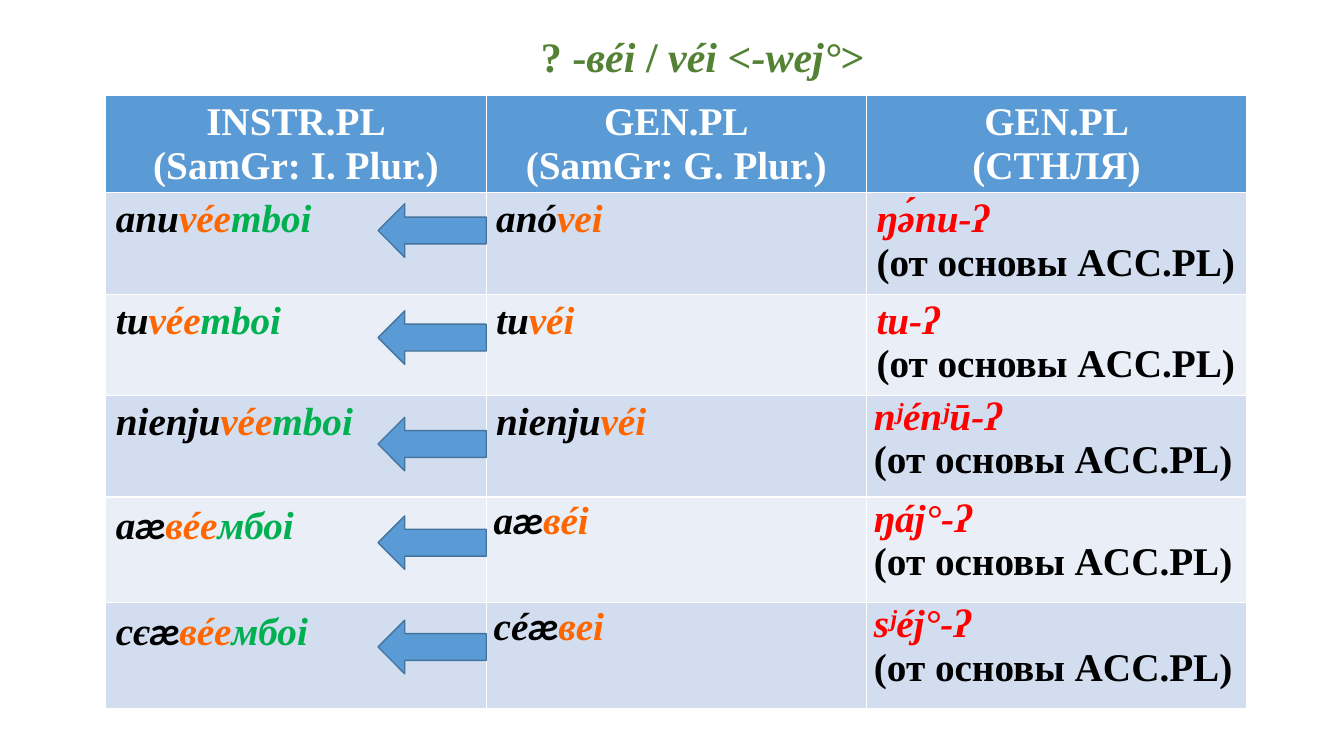
from pptx import Presentation
from pptx.dml.color import RGBColor
from pptx.enum import shapes, text
from pptx.util import Pt

SERIF, SANS = "Times New Roman", "Calibri"
WHITE = RGBColor(0xFF, 0xFF, 0xFF)
BLACK = RGBColor(0, 0, 0)
GREEN = RGBColor(0x00, 0xB0, 0x50)
ORANGE = RGBColor(0xFF, 0x66, 0x00)
RED = RGBColor(0xFF, 0, 0)
TITLE_GREEN = RGBColor(0x54, 0x82, 0x35)
BLUE = RGBColor(0x5B, 0x9B, 0xD5)
BLUE_LINE = RGBColor(0x43, 0x73, 0x9E)
BANDS = RGBColor(0xD2, 0xDE, 0xEF), RGBColor(0xEA, 0xEF, 0xF7)

TITLE = [("? -", False), ("вéi ", True), ("/ ", False), ("véi ", True),
         ("<", False), ("-wej°", True), (">", False)]
HEADERS = [("INSTR.PL", "(SamGr: I. Plur.)"),
           ("GEN.PL", "(SamGr: G. Plur.)"),
           ("GEN.PL", "(СТНЛЯ)")]
# Instrumental parts, genitive parts, modern form, columns with tight margins
FORMS = [
    (["anu", "vée", "mboi"], ["anó", "vei"], "ŋə́nu-ʔ", ()),
    (["tu", "vée", "mboi"], ["tu", "véi"], "tu-ʔ", ()),
    (["nienju", "vée", "mboi"], ["nienju", "véi"], "nʲénʲū-ʔ", (2,)),
    (["аæ", "вéе", "мбоi"], ["aæ", "вéi"], "ŋáj°-ʔ", (1, 2)),
    (["cєæ", "вéе", "мбоi"], ["céæ", "вei"], "sʲéj°-ʔ", (1, 2)),
]
STEM_NOTE = "(от основы ACC.PL)"
ROW_HEIGHTS = [69, 72.5, 72.5, 72.5, 75.5, 75.5]
ARROW_TOPS = [145.5, 222, 298, 368.5, 443]


def add_run(p, content, color, font=SERIF):
    r = p.add_run()
    r.text = content
    r.font.name = font
    r.font.color.rgb = color
    return r


def format_paragraph(p, size, italic=None, align=None):
    p.font.size = Pt(size)
    p.font.bold = True
    p.font.italic = italic
    p.alignment = align


def fill_title(sp):
    sp.left, sp.top, sp.width, sp.height = Pt(55.5), Pt(16.5), Pt(893), Pt(51)
    tf = sp.text_frame
    tf.auto_size = text.MSO_AUTO_SIZE.NONE
    tf.vertical_anchor = text.MSO_ANCHOR.MIDDLE
    p = tf.paragraphs[0]
    format_paragraph(p, 30, align=text.PP_ALIGN.CENTER)
    p.line_spacing = 0.9
    for content, italic in TITLE:
        add_run(p, content, TITLE_GREEN).font.italic = italic


def fill_cell(cell, fill, tight=False):
    cell.fill.solid()
    cell.fill.fore_color.rgb = fill
    if tight:
        cell.margin_left = cell.margin_right = Pt(5.4)
        cell.margin_top = cell.margin_bottom = 0
    return cell.text_frame


def write_header(tf, lines):
    for i, line in enumerate(lines):
        p = tf.add_paragraph() if i else tf.paragraphs[0]
        format_paragraph(p, 28, align=text.PP_ALIGN.CENTER)
        add_run(p, line, WHITE)


def write_word(tf, parts):
    p = tf.paragraphs[0]
    format_paragraph(p, 28, italic=True)
    for part, color in zip(parts, (BLACK, ORANGE, GREEN)):
        add_run(p, part.removesuffix("æ"), color)
        if part.endswith("æ"):
            add_run(p, "æ", color, SANS)


def write_modern_form(tf, form):
    p = tf.paragraphs[0]
    format_paragraph(p, 28, italic=True)
    add_run(p, form, RED)
    p = tf.add_paragraph()
    format_paragraph(p, 28, italic=False)
    add_run(p, STEM_NOTE, BLACK)


def add_forms_table(s):
    table = s.shapes.add_table(len(ROW_HEIGHTS), len(HEADERS), Pt(75.6), Pt(68.4),
                               Pt(815), Pt(sum(ROW_HEIGHTS))).table
    for row, height in zip(table.rows, ROW_HEIGHTS):
        row.height = Pt(height)
    for col, lines in enumerate(HEADERS):
        write_header(fill_cell(table.cell(0, col), BLUE), lines)
    for i, (instrumental, genitive, modern, tight) in enumerate(FORMS):
        frames = [fill_cell(table.cell(i + 1, col), BANDS[i % 2], col in tight)
                  for col in range(len(HEADERS))]
        write_word(frames[0], instrumental)
        write_word(frames[1], genitive)
        write_modern_form(frames[2], modern)


def add_arrow(s, top):
    sp = s.shapes.add_shape(shapes.MSO_SHAPE.LEFT_ARROW, Pt(270), Pt(top), Pt(77.3), Pt(38.3))
    sp.shadow.inherit = False
    sp.fill.solid()
    sp.fill.fore_color.rgb = BLUE
    sp.line.color.rgb = BLUE_LINE
    sp.line.width = Pt(1)


def main():
    prs = Presentation()
    prs.slide_width, prs.slide_height = Pt(960), Pt(540)
    s = prs.slides.add_slide(prs.slide_layouts[5])
    # Title
    fill_title(s.shapes.title)
    # Table of case forms
    add_forms_table(s)
    # Arrows from genitive to instrumental
    for top in ARROW_TOPS:
        add_arrow(s, top)
    prs.save("out.pptx")


if __name__ == "__main__":
    main()
